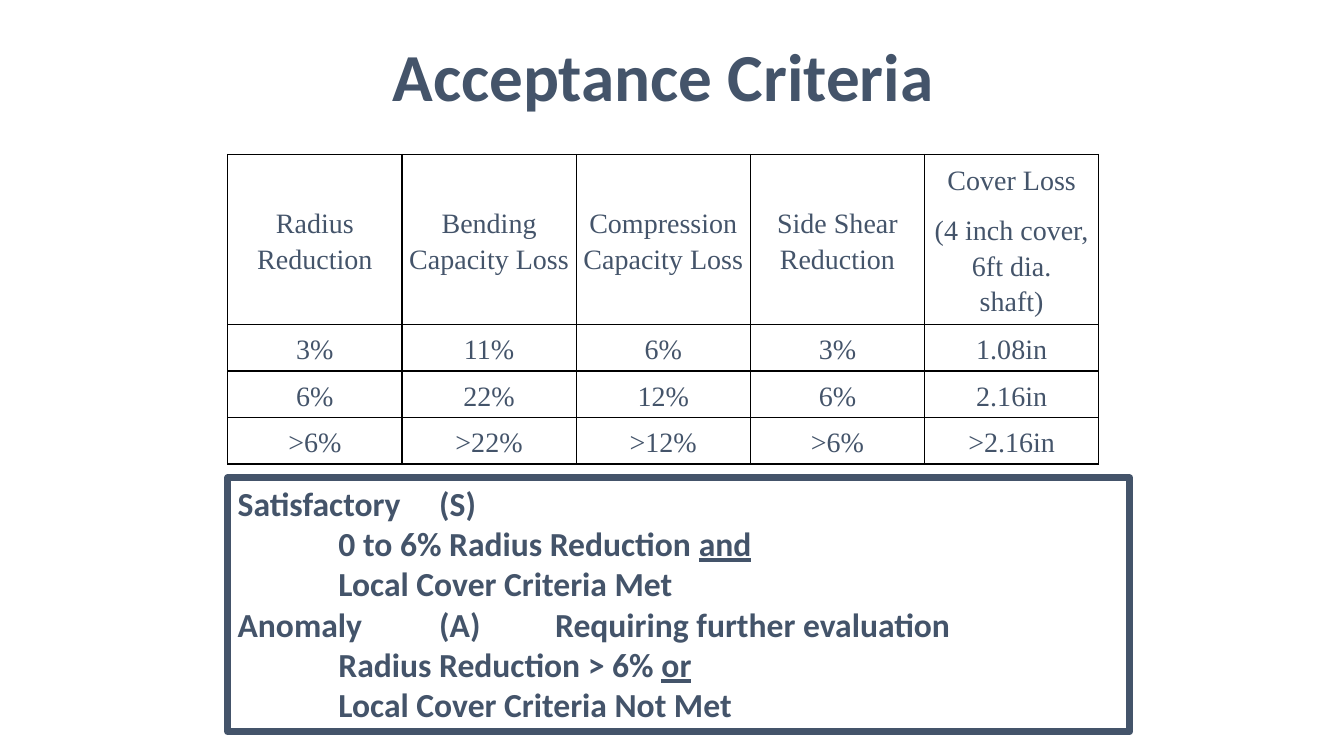
import lxml.etree
import pptx
import pptx.dml.color
import pptx.enum.shapes
import pptx.enum.text
import pptx.oxml.ns
import pptx.util

Cm = pptx.util.Cm
Pt = pptx.util.Pt
qn = pptx.oxml.ns.qn
ALIGN = pptx.enum.text.PP_ALIGN
ANCHOR = pptx.enum.text.MSO_ANCHOR
SLATE = pptx.dml.color.RGBColor(0x44, 0x54, 0x6A)
BLACK = pptx.dml.color.RGBColor(0x00, 0x00, 0x00)


def write(paragraph, text, size, font="Calibri", bold=False, underline=False,
          align=ALIGN.LEFT, spacing=1.0, after=0):
    paragraph.alignment = align
    paragraph.line_spacing = spacing
    paragraph.space_before = Pt(0)
    paragraph.space_after = Pt(after)
    for number, line in enumerate(text.split("\n")):
        if number:
            paragraph.add_line_break()
        run = paragraph.add_run()
        run.text = line
        run.font.name = font
        run.font.size = Pt(size)
        run.font.bold = bold
        run.font.underline = underline
        run.font.color.rgb = SLATE


def draw_borders(cell):
    properties = cell._tc.get_or_add_tcPr()
    for side in ("a:lnL", "a:lnR", "a:lnT", "a:lnB"):
        border = lxml.etree.SubElement(properties, qn(side), w=str(Pt(1)))
        fill = lxml.etree.SubElement(border, qn("a:solidFill"))
        lxml.etree.SubElement(fill, qn("a:srgbClr"), val=str(BLACK))


presentation = pptx.Presentation()
presentation.slide_width = Cm(33.87)
presentation.slide_height = Cm(19.05)
slide = presentation.slides.add_slide(presentation.slide_layouts[5])

heading = slide.shapes.title
heading.left, heading.top = Cm(2.11), Cm(0.18)
heading.width, heading.height = Cm(29.21), Cm(3.68)
heading.text_frame.vertical_anchor = ANCHOR.MIDDLE
heading.text_frame.auto_size = pptx.enum.text.MSO_AUTO_SIZE.NONE
write(heading.text_frame.paragraphs[0], "Acceptance Criteria", size=48,
      bold=True, align=ALIGN.CENTER, spacing=0.9)

limits = [
    ["Radius Reduction", "Bending Capacity Loss", "Compression Capacity Loss",
     "Side Shear Reduction", ["Cover Loss", "(4 inch cover,\n6ft dia.\nshaft)"]],
    ["3%", "11%", "6%", "3%", "1.08in"],
    ["6%", "22%", "12%", "6%", "2.16in"],
    [">6%", ">22%", ">12%", ">6%", ">2.16in"],
]
limit_table = slide.shapes.add_table(
    len(limits), len(limits[0]), Cm(5.74), Cm(3.89), Cm(21.95), Cm(7.8)).table
limit_table.first_row = False
limit_table.horz_banding = False
for column in limit_table.columns:
    column.width = Cm(4.39)
for row_number, row in enumerate(limits):
    limit_table.rows[row_number].height = Cm(1.17 if row_number else 4.29)
    for column_number, entry in enumerate(row):
        cell = limit_table.cell(row_number, column_number)
        cell.vertical_anchor = ANCHOR.MIDDLE
        cell.margin_left = cell.margin_right = Cm(0.18)
        cell.margin_top = cell.margin_bottom = 0
        draw_borders(cell)
        cell.fill.background()
        lines = entry if isinstance(entry, list) else [entry]
        for number, line in enumerate(lines):
            frame = cell.text_frame
            paragraph = frame.add_paragraph() if number else frame.paragraphs[0]
            write(paragraph, line, size=20, font="Times New Roman",
                  align=ALIGN.CENTER, spacing=1.15, after=10)

ratings = slide.shapes.add_shape(
    pptx.enum.shapes.MSO_SHAPE.RECTANGLE, Cm(5.74), Cm(12.04), Cm(22.73), Cm(6.4))
ratings.shadow.inherit = False
ratings.fill.background()
ratings.line.color.rgb = SLATE
ratings.line.width = Pt(5)
ratings.text_frame.word_wrap = True
ratings.text_frame.vertical_anchor = ANCHOR.TOP
ratings.text_frame.auto_size = pptx.enum.text.MSO_AUTO_SIZE.SHAPE_TO_FIT_TEXT
criteria = [
    ("Satisfactory\t(S)", ""),
    ("\t0 to 6% Radius Reduction ", "and"),
    ("\tLocal Cover Criteria Met", ""),
    ("Anomaly\t(A)\tRequiring further evaluation", ""),
    ("\tRadius Reduction > 6% ", "or"),
    ("\tLocal Cover Criteria Not Met", ""),
]
for number, (criterion, conjunction) in enumerate(criteria):
    frame = ratings.text_frame
    paragraph = frame.add_paragraph() if number else frame.paragraphs[0]
    tabs = lxml.etree.SubElement(paragraph._p.get_or_add_pPr(), qn("a:tabLst"))
    for stop in (2.54, 5.08, 8):
        lxml.etree.SubElement(tabs, qn("a:tab"), pos=str(Cm(stop)), algn="l")
    write(paragraph, criterion, size=24, bold=True)
    if conjunction:
        write(paragraph, conjunction, size=24, bold=True, underline=True)

presentation.save("out.pptx")
